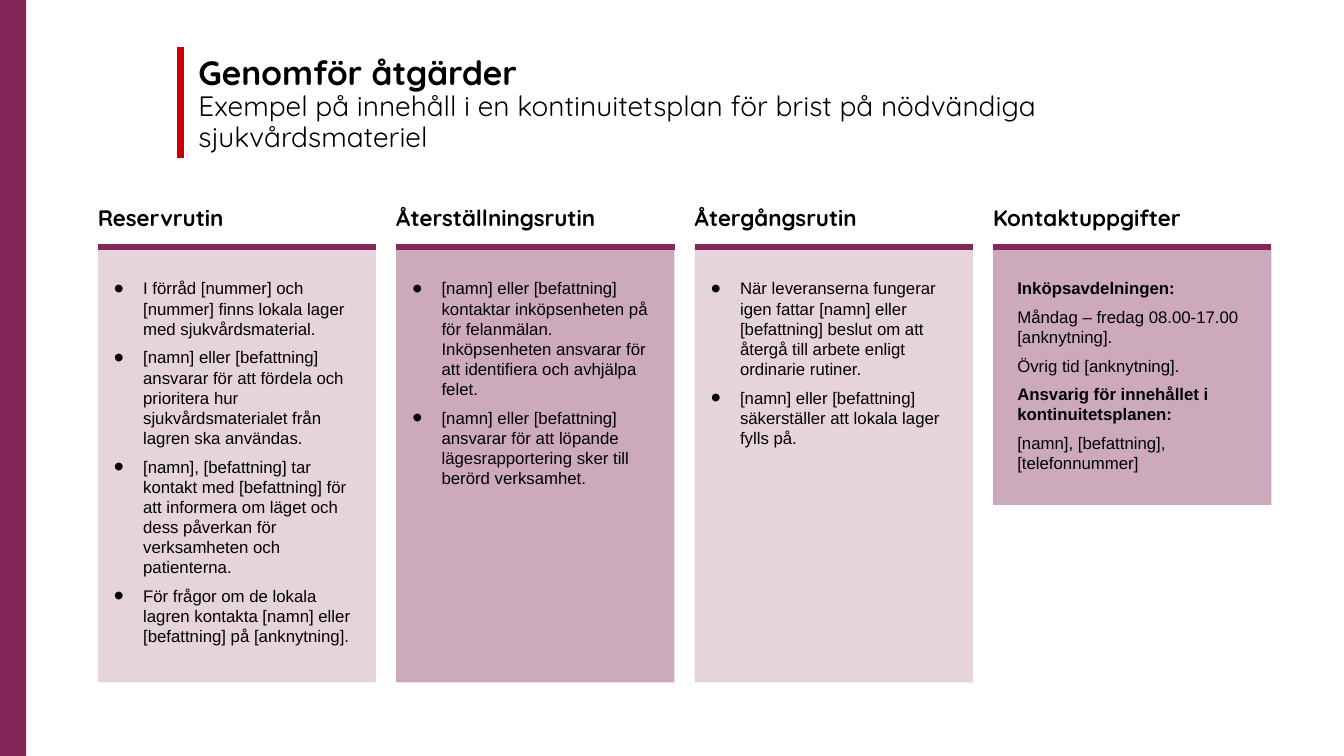
"""Build a slide with four columns of a continuity plan."""
from dataclasses import dataclass
from typing import Any

import lxml.etree
import pptx
import pptx.dml.color
import pptx.enum.shapes
import pptx.enum.text
import pptx.oxml.ns
import pptx.util

Inches = pptx.util.Inches
Pt = pptx.util.Pt
Anchor = pptx.enum.text.MSO_ANCHOR
Fit = pptx.enum.text.MSO_AUTO_SIZE

WIDE, HIGH = 13.33, 7.5
LEFT, PITCH, WIDTH = 0.97, 2.96, 2.76
HEAD, TOP = 2.02, 2.45
COLORS = {"plum": "822757", "pale": "E6D4DD", "rose": "CDA9BC",
          "red": "CC0000", "black": "000000"}
FONTS = {
    "title": {"name": "Quicksand", "size": Pt(24), "bold": True},
    "sub": {"name": "Quicksand", "size": Pt(20), "bold": False},
    "head": {"name": "Quicksand", "size": Pt(16), "bold": True},
    "body": {"name": "Arial", "size": Pt(12), "bold": False},
    "strong": {"name": "Arial", "size": Pt(12), "bold": True},
}


@dataclass
class Column:
    head: str
    fill: str
    lines: list[tuple[str, str]]
    high: float = 4.32
    inset: float = 0.16
    dots: bool = True


COLUMNS = [
    Column("Reservrutin", "pale", [
        ("body", "I förråd [nummer] och [nummer] finns lokala lager med sjukvårdsmaterial."),
        ("body", "[namn] eller [befattning] ansvarar för att fördela och prioritera hur "
                 "sjukvårdsmaterialet från lagren ska användas."),
        ("body", "[namn], [befattning] tar kontakt med [befattning] för att informera om "
                 "läget och dess påverkan för verksamheten och patienterna."),
        ("body", "För frågor om de lokala lagren kontakta [namn] eller [befattning] på "
                 "[anknytning]."),
    ]),
    Column("Återställningsrutin", "rose", [
        ("body", "[namn] eller [befattning] kontaktar inköpsenheten på för felanmälan. "
                 "Inköpsenheten ansvarar för att identifiera och avhjälpa felet."),
        ("body", "[namn] eller [befattning] ansvarar för att löpande lägesrapportering "
                 "sker till berörd verksamhet."),
    ]),
    Column("Återgångsrutin", "pale", [
        ("body", "När leveranserna fungerar igen fattar [namn] eller [befattning] beslut "
                 "om att återgå till arbete enligt ordinarie rutiner."),
        ("body", "[namn] eller [befattning] säkerställer att lokala lager fylls på."),
    ]),
    Column("Kontaktuppgifter", "rose", [
        ("strong", "Inköpsavdelningen:"),
        ("body", "Måndag – fredag 08.00-17.00 [anknytning]."),
        ("body", "Övrig tid [anknytning]."),
        ("strong", "Ansvarig för innehållet i kontinuitetsplanen:"),
        ("body", "[namn], [befattning], [telefonnummer]"),
    ], high=2.56, inset=0.24, dots=False),
]


def color(name: str) -> pptx.dml.color.RGBColor:
    return pptx.dml.color.RGBColor.from_string(COLORS[name])


def write(para: Any, text: str, style: str) -> None:
    run = para.add_run()
    run.text = text
    for key, value in FONTS[style].items():
        setattr(run.font, key, value)
    run.font.color.rgb = color("black")


def frame(shape: Any, insets: tuple[float, ...], anchor: Any, fit: Any) -> Any:
    text = shape.text_frame
    values = {"word_wrap": True, "vertical_anchor": anchor, "auto_size": fit}
    sides = ("margin_left", "margin_top", "margin_right", "margin_bottom")
    values.update(zip(sides, map(Inches, insets)))
    for key, value in values.items():
        setattr(text, key, value)
    return text


def bullet(para: Any) -> None:
    props = para._p.get_or_add_pPr()
    props.set("marL", str(Inches(0.29)))
    props.set("indent", str(Inches(-0.29)))
    for tag, key, value in (("a:buSzPct", "val", "170000"),
                            ("a:buFont", "typeface", "Arial"),
                            ("a:buChar", "char", "•")):
        lxml.etree.SubElement(props, pptx.oxml.ns.qn(tag)).set(key, value)


def block(slide: Any, left: float, top: float, wide: float, high: float, fill: str) -> Any:
    shape = slide.shapes.add_shape(pptx.enum.shapes.MSO_SHAPE.RECTANGLE,
                                   *map(Inches, (left, top, wide, high)))
    shape.shadow.inherit = False
    shape.fill.solid()
    shape.fill.fore_color.rgb = color(fill)
    shape.line.fill.background()
    return shape


def rule(slide: Any, start: tuple[float, float], end: tuple[float, float],
         tint: str, size: float) -> None:
    line = slide.shapes.add_connector(pptx.enum.shapes.MSO_CONNECTOR.STRAIGHT,
                                      *map(Inches, start + end))
    line.line.color.rgb = color(tint)
    line.line.width = Pt(size)
    lxml.etree.SubElement(line._element.spPr, pptx.oxml.ns.qn("a:effectLst"))


def title(slide: Any) -> None:
    box = slide.shapes.add_textbox(*map(Inches, (1.87, 0.51, 9.68, 1.07)))
    text = frame(box, (0.1, 0.05, 0.1, 0.05), Anchor.TOP, Fit.SHAPE_TO_FIT_TEXT)
    para = text.paragraphs[0]
    para.line_spacing = 0.9
    write(para, "Genomför åtgärder", "title")
    para.add_line_break()
    write(para, "Exempel på innehåll i en kontinuitetsplan för brist på nödvändiga "
                "sjukvårdsmateriel", "sub")
    rule(slide, (1.79, 0.47), (1.79, 1.57), "red", 5)


def column(slide: Any, left: float, item: Column) -> None:
    panel = block(slide, left, TOP, WIDTH, item.high, item.fill)
    text = frame(panel, (item.inset, 0.31, 0.24, 0.2), Anchor.TOP, Fit.NONE)
    for index, (style, words) in enumerate(item.lines):
        para = text.add_paragraph() if index else text.paragraphs[0]
        if item.dots:
            bullet(para)
        para.alignment = pptx.enum.text.PP_ALIGN.LEFT
        para.space_after = Pt(6)
        write(para, words, style)
    box = slide.shapes.add_textbox(*map(Inches, (left, HEAD, WIDTH, 0.27)))
    label = frame(box, (0, 0, 0.2, 0), Anchor.BOTTOM, Fit.SHAPE_TO_FIT_TEXT)
    label.paragraphs[0].space_after = Pt(6)
    write(label.paragraphs[0], item.head, "head")
    rule(slide, (left, TOP), (left + WIDTH, TOP), "plum", 4)


def main() -> None:
    deck = pptx.Presentation()
    deck.slide_width, deck.slide_height = Inches(WIDE), Inches(HIGH)
    slide = deck.slides.add_slide(deck.slide_layouts[6])
    block(slide, 0, 0, 0.26, HIGH, "plum")
    title(slide)
    for index, item in enumerate(COLUMNS):
        column(slide, LEFT + index * PITCH, item)
    deck.save("out.pptx")


if __name__ == "__main__":
    main()
